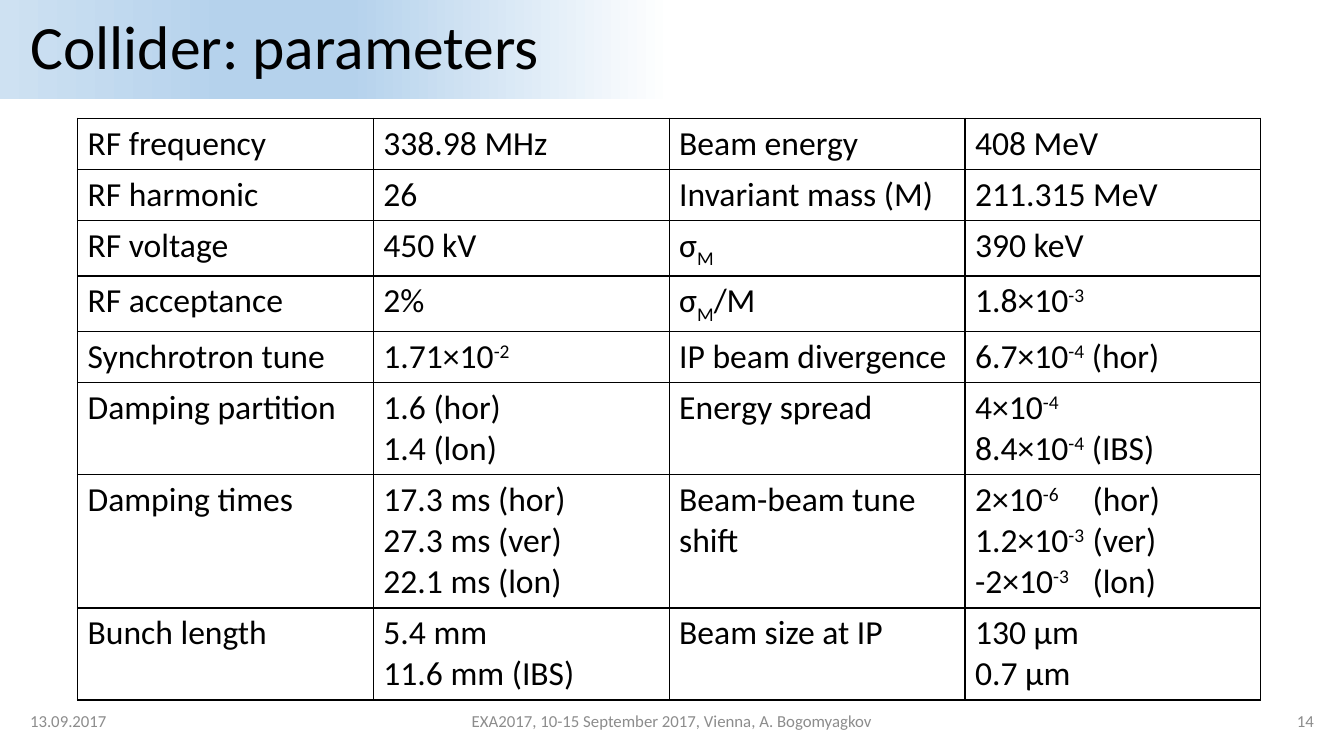
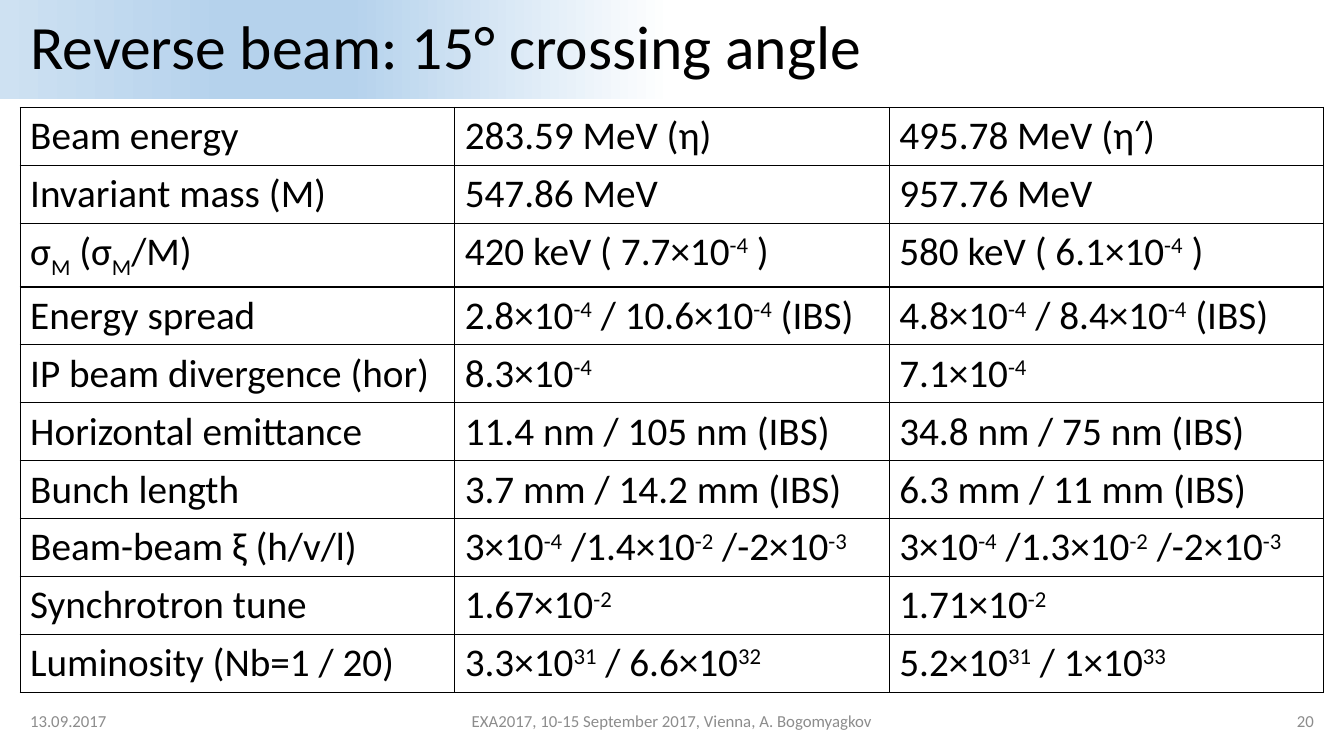
import pptx
import pptx.dml.color
import pptx.enum.shapes
import pptx.enum.text
import pptx.oxml.ns
import pptx.util
from lxml import etree

Pt = pptx.util.Pt
qn = pptx.oxml.ns.qn
ALIGN = pptx.enum.text.PP_ALIGN

PAGE_WIDTH, PAGE_HEIGHT = 960, 540
MARGIN = 14.4
FONT = "Calibri"
BLACK, GREY = "000000", "8C8C8C"
BAND_STOPS = [(50, "FFFFFF"), (74, "B5D2EC"), (83, "B5D2EC"), (100, "CEE1F2")]
BAND_HEIGHT = 70.6
DATE = "13.09.2017"
EVENT = "EXA2017, 10-15 September 2017, Vienna, A. Bogomyagkov"
SUPERSCRIPT, SUBSCRIPT = "30000", "-25000"
LINE_FACTOR, CELL_PADDING = 1.22, 7.2
TAB_STOP = 84

# In cells, ^...^ is superscript, _..._ is subscript, and a new line is a new paragraph.
COLLIDER_ROWS = [
    ["RF frequency", "338.98 MHz", "Beam energy", "408 MeV"],
    ["RF harmonic", "26", "Invariant mass (M)", "211.315 MeV"],
    ["RF voltage", "450 kV", "σ_M_", "390 keV"],
    ["RF acceptance", "2%", "σ_M_/M", "1.8×10^-3^"],
    ["Synchrotron tune", "1.71×10^-2^", "IP beam divergence", "6.7×10^-4^ (hor)"],
    ["Damping partition", "1.6 (hor)\n1.4 (lon)", "Energy spread", "4×10^-4^\n8.4×10^-4^ (IBS)"],
    ["Damping times", "17.3 ms (hor)\n27.3 ms (ver)\n22.1 ms (lon)", "Beam-beam tune shift",
     "2×10^-6^\t(hor)\n1.2×10^-3^\t(ver)\n-2×10^-3^\t(lon)"],
    ["Bunch length", "5.4 mm\n11.6 mm (IBS)", "Beam size at IP", "130 μm\n0.7 μm"],
]
REVERSE_ROWS = [
    ["Beam energy", "283.59 MeV (η)", "495.78 MeV (η′)"],
    ["Invariant mass (M)", "547.86 MeV", "957.76 MeV"],
    ["σ_M_ (σ_M_/M)", "420 keV ( 7.7×10^-4^ )", "580 keV ( 6.1×10^-4^ )"],
    ["Energy spread", "2.8×10^-4^ / 10.6×10^-4^ (IBS)", "4.8×10^-4^ / 8.4×10^-4^ (IBS)"],
    ["IP beam divergence (hor)", "8.3×10^-4^", "7.1×10^-4^"],
    ["Horizontal emittance", "11.4 nm / 105 nm (IBS)", "34.8 nm / 75 nm (IBS)"],
    ["Bunch length", "3.7 mm / 14.2 mm (IBS)", "6.3 mm / 11 mm (IBS)"],
    ["Beam-beam ξ (h/v/l)", "3×10^-4^ /1.4×10^-2^ /-2×10^-3^", "3×10^-4^ /1.3×10^-2^ /-2×10^-3^"],
    ["Synchrotron tune", "1.67×10^-2^", "1.71×10^-2^"],
    ["Luminosity (Nb=1 / 20)", "3.3×10^31^ / 6.6×10^32^", "5.2×10^31^ / 1×10^33^"],
]


def colour(value):
    return pptx.dml.color.RGBColor.from_string(value)


def add_span(para, text, size, shade, baseline=None):
    span = para.add_run()
    span.text = text
    span.font.name = FONT
    span.font.size = Pt(size)
    span.font.color.rgb = colour(shade)
    if baseline:
        span.font.language_id = None
        span.font.bold = False
        para.runs[-1].font.fill.solid()
        span.font.color.rgb = colour(shade)
        para.runs[-1].font.italic = False
        para._p.findall(qn("a:r"))[-1].find(qn("a:rPr")).set("baseline", baseline)


def add_marked_text(para, text, size):
    for outer, part in enumerate(text.split("^")):
        for inner, piece in enumerate(part.split("_")):
            baseline = SUPERSCRIPT if outer % 2 else SUBSCRIPT if inner % 2 else None
            if piece:
                add_span(para, piece, size, BLACK, baseline)


def set_tab_stop(para, position):
    tabs = etree.SubElement(para._p.get_or_add_pPr(), qn("a:tabLst"))
    etree.SubElement(tabs, qn("a:tab"), pos=str(Pt(position)), algn="l")


def add_title_band(page, text):
    band = page.shapes.add_shape(pptx.enum.shapes.MSO_SHAPE.RECTANGLE,
                                 0, 0, Pt(PAGE_WIDTH), Pt(BAND_HEIGHT))
    band.shadow.inherit = False
    band.line.fill.background()
    # Four-stop gradient
    band.fill.gradient()
    band.fill.gradient_angle = 180
    stops = band.element.spPr.find(".//" + qn("a:gsLst"))
    for stop in list(stops):
        stops.remove(stop)
    for position, shade in BAND_STOPS:
        stop = etree.SubElement(stops, qn("a:gs"), pos=str(position * 1000))
        etree.SubElement(stop, qn("a:srgbClr"), val=shade)
    # Title text
    frame = band.text_frame
    frame.word_wrap = True
    frame.margin_left = Pt(21.6)
    frame.vertical_anchor = pptx.enum.text.MSO_ANCHOR.MIDDLE
    para = frame.paragraphs[0]
    para.alignment = ALIGN.LEFT
    para.line_spacing = 0.9
    add_span(para, text, 44, BLACK)


def add_footer(page, number):
    side, middle = 216, 324
    parts = [
        (MARGIN, side, ALIGN.LEFT, DATE),
        ((PAGE_WIDTH - middle) / 2, middle, ALIGN.CENTER, EVENT),
        (PAGE_WIDTH - MARGIN - side, side, ALIGN.RIGHT, str(number)),
    ]
    for left, width, alignment, text in parts:
        box = page.shapes.add_textbox(Pt(left), Pt(500.4), Pt(width), Pt(28.8))
        frame = box.text_frame
        frame.word_wrap = True
        frame.vertical_anchor = pptx.enum.text.MSO_ANCHOR.MIDDLE
        para = frame.paragraphs[0]
        para.alignment = alignment
        add_span(para, text, 12, GREY)


def style_cell(cell):
    properties = cell._tc.get_or_add_tcPr()
    for side in ("a:lnL", "a:lnR", "a:lnT", "a:lnB"):
        line = etree.SubElement(properties, qn(side), w=str(Pt(1)))
        fill = etree.SubElement(line, qn("a:solidFill"))
        etree.SubElement(fill, qn("a:srgbClr"), val=BLACK)
    cell.fill.background()


def fill_cell(cell, text, size):
    style_cell(cell)
    for index, line in enumerate(text.split("\n")):
        frame = cell.text_frame
        para = frame.add_paragraph() if index else frame.paragraphs[0]
        if "\t" in line:
            set_tab_stop(para, TAB_STOP)
        add_marked_text(para, line, size)


def add_parameter_table(page, rows, left, top, width, size):
    heights = [CELL_PADDING + LINE_FACTOR * size * max(text.count("\n") + 1 for text in row)
               for row in rows]
    columns = len(rows[0])
    table = page.shapes.add_table(len(rows), columns, Pt(left), Pt(top),
                                  Pt(width), Pt(sum(heights))).table
    table.first_row = False
    table.horz_banding = False
    for column in table.columns:
        column.width = Pt(width / columns)
    for row_index, row in enumerate(rows):
        table.rows[row_index].height = Pt(heights[row_index])
        for column_index, text in enumerate(row):
            fill_cell(table.cell(row_index, column_index), text, size)


def add_parameter_page(deck, title, number, rows, left, top, width, size):
    page = deck.slides.add_slide(deck.slide_layouts[6])
    add_title_band(page, title)
    add_parameter_table(page, rows, left, top, width, size)
    add_footer(page, number)


def main():
    deck = pptx.Presentation()
    deck.slide_width, deck.slide_height = Pt(PAGE_WIDTH), Pt(PAGE_HEIGHT)
    add_parameter_page(deck, "Collider: parameters", 14, COLLIDER_ROWS,
                       left=55.4, top=84.4, width=845.2, size=24)
    add_parameter_page(deck, "Reverse beam: 15° crossing angle", 20, REVERSE_ROWS,
                       left=MARGIN, top=76.8, width=PAGE_WIDTH - 2 * MARGIN, size=28)
    deck.save("out.pptx")


if __name__ == "__main__":
    main()
